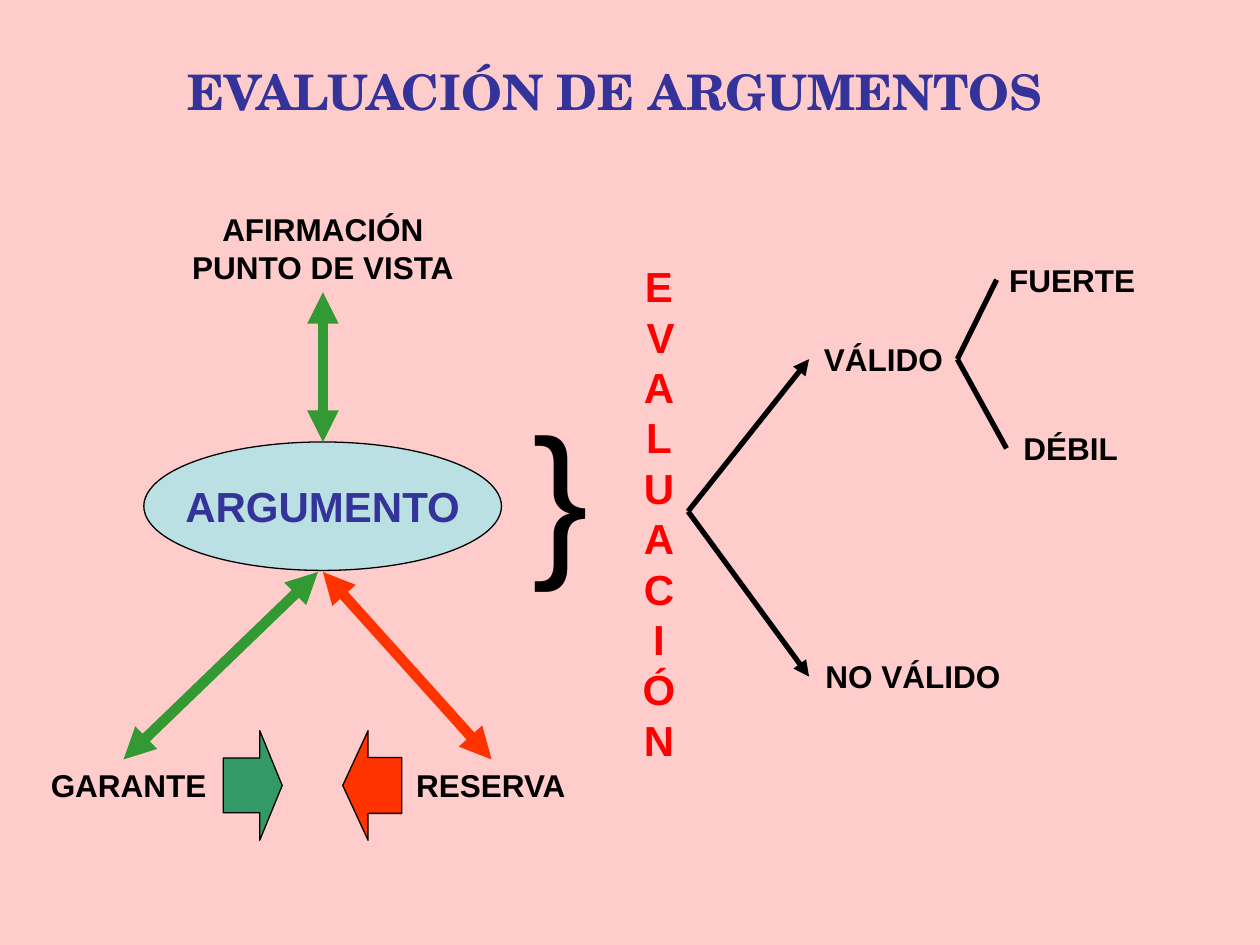
from lxml import etree
from pptx import Presentation
from pptx import util as u
from pptx.dml import color
from pptx.enum import shapes, text
from pptx.oxml import ns

BLACK, BLUE, GREEN, RED = "000000", "333399", "339933", "FF3300"
LABEL = {"size": u.Pt(18), "bold": True, "name": "Arial"}
LARGE = {**LABEL, "size": u.Pt(24)}
TITLE = {"size": u.Pt(28), "bold": True, "name": "TeX Gyre Schola"}
BRACE = {"size": u.Pt(96), "bold": False, "name": "Arial"}
KIND = shapes.MSO_SHAPE


def rgb(value):
    return color.RGBColor.from_string(value)


def place(origin, box):
    """Turn a box relative to a region into slide lengths."""
    left, top, width, height = box
    return [u.Cm(n) for n in (origin[0] + left, origin[1] + top, width, height)]


def write(frame, words, style, tint=BLACK, wrap=True,
          anchor=text.MSO_ANCHOR.TOP, align=text.PP_ALIGN.CENTER):
    frame.text = words
    frame.auto_size = text.MSO_AUTO_SIZE.NONE
    frame.word_wrap = wrap
    frame.vertical_anchor = anchor
    line = frame.paragraphs[0]
    line.alignment = align
    font = line.runs[0].font
    for key, value in style.items():
        setattr(font, key, value)
    font.color.rgb = rgb(tint)


def label(slide, origin, box, words, style=LABEL, **look):
    item = slide.shapes.add_textbox(*place(origin, box))
    write(item.text_frame, words, style, **look)


def block(slide, origin, box, kind, fill, adjust=()):
    item = slide.shapes.add_shape(kind, *place(origin, box))
    item.shadow.inherit = False
    item.fill.solid()
    item.fill.fore_color.rgb = rgb(fill)
    item.line.color.rgb = rgb(BLACK)
    item.line.width = u.Pt(0.75)
    for index, value in enumerate(adjust):
        item.adjustments[index] = value
    return item


def link(slide, origin, start, end, tint=BLACK, width=3, tips=()):
    """Draw a line; tips names the ends that carry an arrowhead."""
    ends = [u.Cm(o + n) for point in (start, end) for o, n in zip(origin, point)]
    item = slide.shapes.add_connector(shapes.MSO_CONNECTOR.STRAIGHT, *ends)
    item.line.color.rgb = rgb(tint)
    item.line.width = u.Pt(width)
    pen = item.line._get_or_add_ln()
    for tip in tips:
        etree.SubElement(pen, ns.qn("a:" + tip), type="triangle")
    etree.SubElement(pen.getparent(), ns.qn("a:effectLst"))


def head(slide, box):
    title = slide.shapes.title
    names = ("left", "top", "width", "height")
    for name, value in zip(names, place((0, 0), box)):
        setattr(title, name, value)
    write(title.text_frame, "EVALUACIÓN DE ARGUMENTOS", TITLE, tint=BLUE)


def model(slide, origin):
    """Argument with its claim, warrant and rebuttal."""
    label(slide, origin, (2.62, 0, 6.4, 1.78), "AFIRMACIÓN PUNTO DE VISTA")
    label(slide, origin, (0, 11.2, 3.81, 1.02), "GARANTE")
    label(slide, origin, (7.01, 11.2, 4.39, 1.02), "RESERVA")

    oval = block(slide, origin, (2.21, 4.8, 7.21, 2.59), KIND.OVAL, "BBE0E3")
    write(oval.text_frame, "ARGUMENTO", LARGE, tint=BLUE, wrap=False,
          anchor=text.MSO_ANCHOR.MIDDLE)

    for left, kind, fill, adjust in (
        (3.81, KIND.RIGHT_ARROW, "339966", (0.5, 0.38)),
        (6.22, KIND.LEFT_ARROW, RED, (0.51, 0.43)),
    ):
        block(slide, origin, (left, 10.62, 1.19, 2.21), kind, fill, adjust)

    for start, end, tint in (
        ((5.82, 1.78), (5.82, 4.8), GREEN),
        ((1.8, 11.2), (5.72, 7.42), GREEN),
        ((5.82, 7.42), (9.22, 11.2), RED),
    ):
        link(slide, origin, start, end, tint, 6, ("headEnd", "tailEnd"))

    label(slide, origin, (9.8, 3.61, 1.6, 4.32), "}", BRACE,
          align=text.PP_ALIGN.LEFT)


def tree(slide, origin):
    """Evaluation and its possible outcomes."""
    label(slide, origin, (0, 0, 1.17, 10.39), "EVALUACIÓN", LARGE, tint="FF0000")
    for left, top, width, words in (
        (3.61, 1.6, 3, "VÁLIDO"),
        (3.61, 8, 4.19, "NO VÁLIDO"),
        (7.39, 0, 3.05, "FUERTE"),
        (7.59, 3.4, 2.59, "DÉBIL"),
    ):
        label(slide, origin, (left, top, width, 1.02), words)

    for start, ends, tips in (
        ((1.17, 5.18), ((3.61, 2.11), (3.61, 8.51)), ("tailEnd",)),
        ((6.6, 2.11), ((7.39, 0.51), (7.59, 3.91)), ()),
    ):
        for end in ends:
            link(slide, origin, start, end, tips=tips)


def main():
    deck = Presentation()
    deck.slide_width, deck.slide_height = u.Cm(25.4), u.Cm(19.05)
    slide = deck.slides.add_slide(deck.slide_layouts.get_by_name("Title Only"))
    slide.background.fill.solid()
    slide.background.fill.fore_color.rgb = rgb("FFCCCC")
    head(slide, (3.1, 1.12, 18.59, 1.45))
    model(slide, (0.69, 4.11))
    tree(slide, (12.7, 5.13))
    deck.save("out.pptx")


if __name__ == "__main__":
    main()
